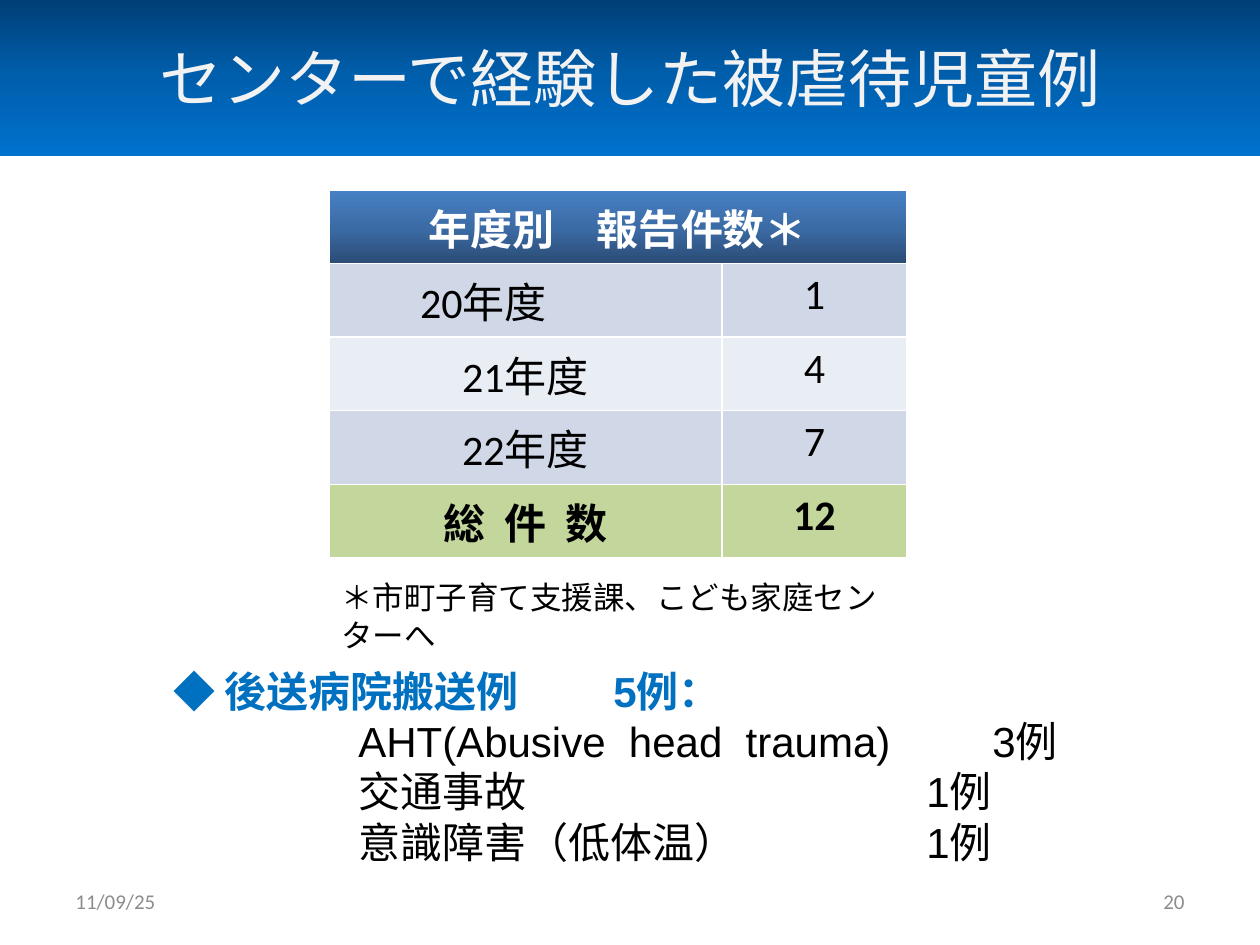
import copy

import pptx
import pptx.dml.color
import pptx.enum.text
import pptx.oxml.ns
import pptx.util

ALIGN = pptx.enum.text.PP_ALIGN
ANCHOR = pptx.enum.text.MSO_ANCHOR
PX = 914400 / 126
BLACK = "000000"
GRAY = "8C8C8C"
BLUE = "0070C0"


def px(*values):
    return [pptx.util.Emu(round(value * PX)) for value in values]


def color(value):
    return pptx.dml.color.RGBColor.from_string(value)


def format_run(run, size, fill, font="Calibri", bold=False):
    run.font.size = pptx.util.Pt(size)
    run.font.name = font
    run.font.bold = bold
    run.font.color.rgb = color(fill)


def fill_gradient(fill, element, colors, angle):
    fill.gradient()
    fill.gradient_angle = angle
    stop_list = element.find(".//" + pptx.oxml.ns.qn("a:gsLst"))
    stop_list.insert(1, copy.deepcopy(stop_list[0]))
    for index, (stop, value) in enumerate(zip(fill.gradient_stops, colors)):
        stop.position = index / (len(colors) - 1)
        stop.color.rgb = color(value)


def set_tabs(paragraph, positions):
    properties = paragraph._p.get_or_add_pPr()
    tab_list = properties.makeelement(pptx.oxml.ns.qn("a:tabLst"), {})
    properties.append(tab_list)
    for position in px(*positions):
        tab = tab_list.makeelement(
            pptx.oxml.ns.qn("a:tab"), {"pos": str(position), "algn": "l"})
        tab_list.append(tab)


def add_title(slide, text):
    title = slide.shapes.title
    title.left, title.top, title.width, title.height = px(0, -1, 1260, 157)
    fill_gradient(title.fill, title._element.spPr,
                  ["003F77", "005FAD", "0072CE"], 270)
    title.text_frame.text = text
    title.text_frame.vertical_anchor = ANCHOR.MIDDLE
    paragraph = title.text_frame.paragraphs[0]
    paragraph.alignment = ALIGN.CENTER
    format_run(paragraph.runs[0], 36, "F2F2F2")


def add_text(slide, box, text, size, fill, align=ALIGN.LEFT, anchor=ANCHOR.TOP):
    text_frame = slide.shapes.add_textbox(*px(*box)).text_frame
    text_frame.word_wrap = True
    text_frame.vertical_anchor = anchor
    text_frame.text = text
    paragraph = text_frame.paragraphs[0]
    paragraph.alignment = align
    format_run(paragraph.runs[0], size, fill)
    return text_frame


def format_cell(cell, text, fill, bold=False):
    cell.text_frame.text = text
    paragraph = cell.text_frame.paragraphs[0]
    paragraph.alignment = ALIGN.CENTER
    format_run(paragraph.runs[0], 24, fill, bold=bold)


def add_report_table(slide, header, rows):
    row_count = len(rows) + 1
    frame = slide.shapes.add_table(
        row_count, 2, *px(329, 190, 578, 73 * row_count))
    table = frame.table
    for column, width in zip(table.columns, px(393, 185)):
        column.width = width
    header_cell = table.cell(0, 0)
    header_cell.merge(table.cell(0, 1))
    header_cell.vertical_anchor = ANCHOR.MIDDLE
    format_cell(header_cell, header, "FFFFFF", bold=True)
    fill_gradient(header_cell.fill, header_cell._tc,
                  ["2A4C75", "3C6CA6", "4780C5"], 90)
    for row_index, values in enumerate(rows, 1):
        is_total = row_index == len(rows)
        band = "D0D8E8" if row_index % 2 else "E9EDF4"
        for column_index, value in enumerate(values):
            cell = table.cell(row_index, column_index)
            format_cell(cell, value, BLACK, bold=is_total)
            cell.fill.solid()
            cell.fill.fore_color.rgb = color("C3D69B" if is_total else band)
    table.cell(1, 0).margin_right = px(97)[0]


def add_transfer_list(slide, heading, cases):
    text_frame = slide.shapes.add_textbox(*px(161, 659, 970, 217)).text_frame
    text_frame.word_wrap = True
    paragraph = text_frame.paragraphs[0]
    set_tabs(paragraph, [440])
    for text, bold in (("◆ ", False), (heading, True)):
        run = paragraph.add_run()
        run.text = text
        format_run(run, 24, BLUE, "Arial", bold)
    for name, count, count_tab in cases:
        paragraph = text_frame.add_paragraph()
        set_tabs(paragraph, [185, count_tab])
        run = paragraph.add_run()
        run.text = f"\t{name}\t{count}"
        format_run(run, 24, BLACK, "Arial")


def main():
    presentation = pptx.Presentation()
    presentation.slide_width, presentation.slide_height = px(1260, 945)
    slide = presentation.slides.add_slide(presentation.slide_layouts[5])
    add_report_table(slide, "年度別　報告件数＊", [
        ("20年度", "1"),
        ("21年度", "4"),
        ("22年度", "7"),
        ("総  件  数", "12"),
    ])
    add_transfer_list(slide, "後送病院搬送例\t5例：", [
        ("AHT(Abusive  head  trauma)", "3例", 819),
        ("交通事故", "1例", 753),
        ("意識障害（低体温）", "1例", 753),
    ])
    add_title(slide, "センターで経験した被虐待児童例")
    add_text(slide, (63, 876, 294, 50), "11/09/25", 12, GRAY,
             anchor=ANCHOR.MIDDLE)
    add_text(slide, (903, 876, 294, 50), "20", 12, GRAY,
             ALIGN.RIGHT, ANCHOR.MIDDLE)
    note = add_text(slide, (329, 572, 616, 50),
                    "＊市町子育て支援課、こども家庭センターへ", 18, BLACK)
    note.margin_right = px(50)[0]
    presentation.save("out.pptx")


if __name__ == "__main__":
    main()
